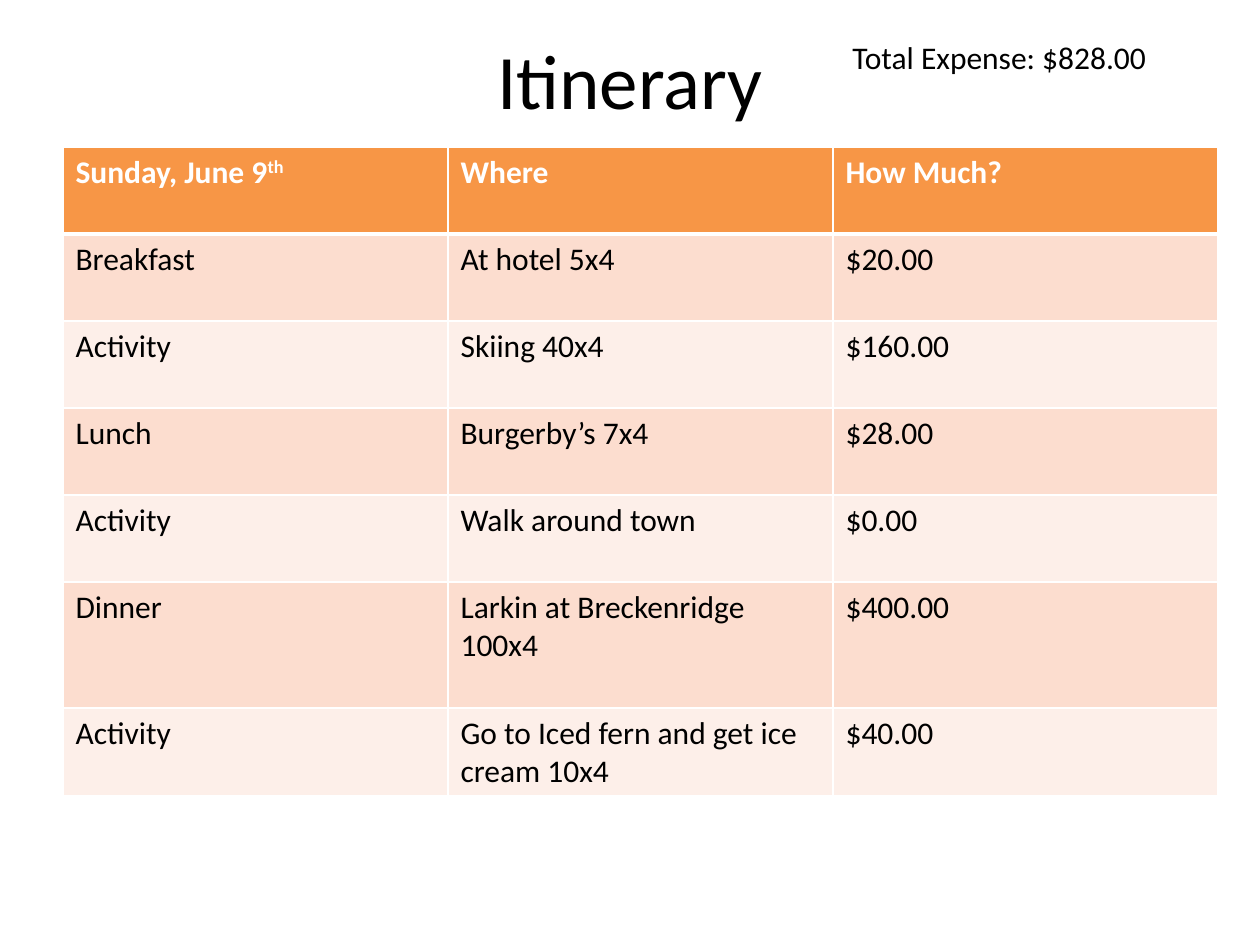
from lxml import etree
from pptx import Presentation
from pptx.dml.color import RGBColor
from pptx.enum.text import MSO_ANCHOR, PP_ALIGN
from pptx.oxml.ns import qn
from pptx.util import Pt

CENTER = PP_ALIGN.CENTER
LEFT = PP_ALIGN.LEFT
MIDDLE = MSO_ANCHOR.MIDDLE

HEADINGS = [("Sunday, June 9", "th"), ("Where", ""), ("How Much?", "")]
PLANS = [
    ("Breakfast", "At hotel 5x4", "$20.00"),
    ("Activity", "Skiing 40x4", "$160.00"),
    ("Lunch", "Burgerby’s 7x4", "$28.00"),
    ("Activity", "Walk around town", "$0.00"),
    ("Dinner", "Larkin at Breckenridge 100x4", "$400.00"),
    ("Activity", "Go to Iced fern and get ice cream 10x4", "$40.00"),
]
COLORS = {
    "text": "000000",
    "heading": "FFFFFF",
    "border": "FFFFFF",
    "header": "F79646",
    "odd": "FCDDCF",
    "even": "FDEFE9",
}
FONT = "Calibri"
EMU_PER_PX = 914400 / 126
COLUMN_WIDTH = 385
ROW_HEIGHT = 87
DINNER_HEIGHT = 126


def px(length):
    return round(length * EMU_PER_PX)


def rgb(name):
    return RGBColor.from_string(COLORS[name])


def write(frame, text, size=18, color="text", bold=False, align=LEFT, superscript=""):
    paragraph = frame.paragraphs[0]
    paragraph.alignment = align
    for part, raised in ((text, False), (superscript, True)):
        if not part:
            continue
        run = paragraph.add_run()
        run.text = part
        run.font.name = FONT
        run.font.size = Pt(size)
        run.font.bold = bold
        run.font.color.rgb = rgb(color)
        if raised:
            run._r.get_or_add_rPr().set("baseline", "30000")


def style_cell(cell, fill, top=1, bottom=1):
    properties = cell._tc.get_or_add_tcPr()
    for side, width in (("L", 1), ("R", 1), ("T", top), ("B", bottom)):
        line = etree.SubElement(properties, qn(f"a:ln{side}"), w=str(Pt(width)))
        solid = etree.SubElement(line, qn("a:solidFill"))
        etree.SubElement(solid, qn("a:srgbClr"), val=COLORS["border"])
    cell.fill.solid()
    cell.fill.fore_color.rgb = rgb(fill)


def main():
    deck = Presentation()
    deck.slide_width, deck.slide_height = px(1260), px(945)
    slide = deck.slides.add_slide(deck.slide_layouts[5])

    title = slide.shapes.title
    title.left, title.top, title.width, title.height = px(63), 0, px(1134), px(158)
    title.text_frame.vertical_anchor = MIDDLE
    write(title.text_frame, "Itinerary", size=44, align=CENTER)

    total = slide.shapes.add_textbox(px(840), px(32), px(388), px(51))
    total.text_frame.word_wrap = True
    write(total.text_frame, "Total Expense: $828.00")

    heights = [DINNER_HEIGHT if plan[0] == "Dinner" else ROW_HEIGHT for plan in PLANS]
    heights.insert(0, ROW_HEIGHT)
    itinerary = slide.shapes.add_table(
        len(heights), len(HEADINGS), px(63), px(147),
        px(COLUMN_WIDTH * len(HEADINGS)), px(sum(heights)),
    ).table
    for column in itinerary.columns:
        column.width = px(COLUMN_WIDTH)
    for row, height in zip(itinerary.rows, heights):
        row.height = px(height)

    for column, (heading, suffix) in enumerate(HEADINGS):
        cell = itinerary.cell(0, column)
        style_cell(cell, "header", bottom=3)
        write(cell.text_frame, heading, color="heading", bold=True, superscript=suffix)
    for row, plan in enumerate(PLANS, start=1):
        for column, entry in enumerate(plan):
            cell = itinerary.cell(row, column)
            style_cell(cell, "odd" if row % 2 else "even", top=3 if row == 1 else 1)
            write(cell.text_frame, entry)

    deck.save("out.pptx")


if __name__ == "__main__":
    main()
